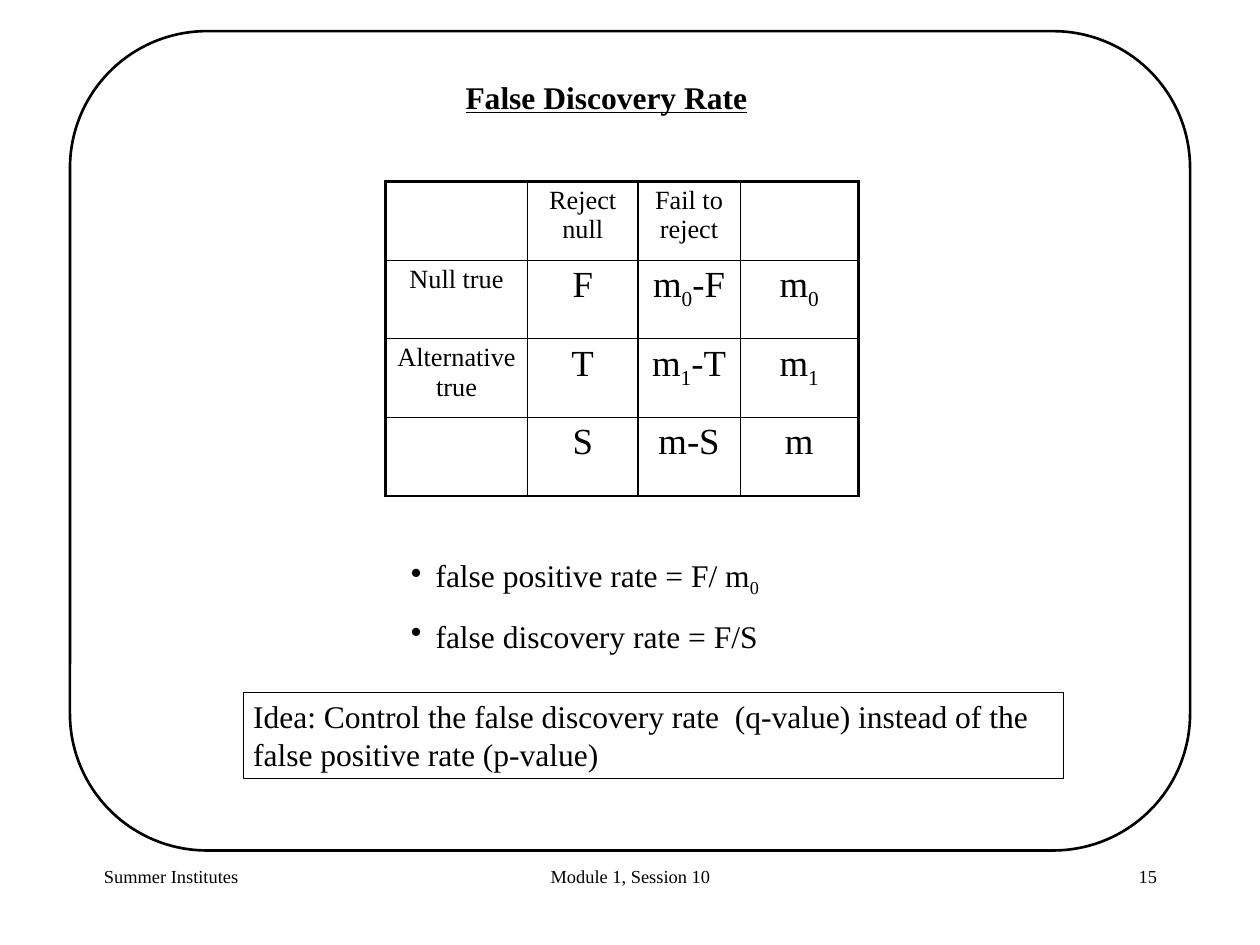
from itertools import product

from lxml.etree import SubElement
from pptx import Presentation
from pptx.dml.color import RGBColor
from pptx.enum.shapes import MSO_SHAPE as SHAPE
from pptx.enum.text import MSO_ANCHOR as ANCHOR, MSO_AUTO_SIZE as AUTO, PP_ALIGN as ALIGN
from pptx.oxml import parse_xml
from pptx.oxml.ns import nsdecls, qn
from pptx.util import Inches, Pt

BLACK = RGBColor(0x00, 0x00, 0x00)
FONT = "Times New Roman"
THIN, THICK = 1, 2.25


class SlideBuilder:
    """Holds the text style and the current slide."""

    def __init__(self, prs):
        self.s = prs.slides.add_slide(prs.slide_layouts[5])
        self.style = {"name": FONT, "bold": False}

    def fill_text(self, p, text, size, align=ALIGN.LEFT, **extra):
        """Fill a paragraph; the character after each "_" is a subscript."""
        p.alignment = align
        first, *rest = text.split("_")
        pieces = [(first, False)]
        for part in rest:
            pieces += [(part[0], True), (part[1:], False)]
        for piece, is_sub in pieces:
            if not piece:
                continue
            r = p.add_run()
            r.text = piece
            for key, value in {**self.style, "size": Pt(size), **extra}.items():
                setattr(r.font, key, value)
            r.font.color.rgb = BLACK
            if is_sub:
                r._r.get_or_add_rPr().set("baseline", "-25000")

    def frame(self, sp):
        tf = sp.text_frame
        for key, value in {"word_wrap": True, "auto_size": AUTO.NONE,
                           "vertical_anchor": ANCHOR.TOP}.items():
            setattr(tf, key, value)
        return tf

    def title(self, text, box, size):
        sp = self.s.shapes.title
        sp.left, sp.top, sp.width, sp.height = map(Inches, box)
        self.fill_text(self.frame(sp).paragraphs[0], text, size, ALIGN.CENTER,
                       bold=True, underline=True)

    def text(self, text, box, size, align=ALIGN.LEFT):
        sp = self.s.shapes.add_textbox(*map(Inches, box))
        self.fill_text(self.frame(sp).paragraphs[0], text, size, align)

    def bullets(self, items, box, size):
        tf = self.frame(self.s.shapes.add_textbox(*map(Inches, box)))
        for i, item in enumerate(items):
            p = tf.add_paragraph() if i else tf.paragraphs[0]
            self.fill_text(p, item, size)
            if i:
                p.space_before = Pt(14)
            pPr = p._p.get_or_add_pPr()
            pPr.set("marL", str(Inches(0.26)))
            pPr.set("indent", str(-Inches(0.26)))
            SubElement(pPr, qn("a:buChar")).set("char", "•")

    def outline(self, kind, box, weight):
        sp = self.s.shapes.add_shape(kind, *map(Inches, box))
        sp.shadow.inherit = False
        sp.fill.background()
        sp.line.color.rgb = BLACK
        sp.line.width = Pt(weight)
        return sp

    def table(self, rows, box, widths, label_size, value_size):
        n_rows, n_cols = len(rows), len(widths)
        tbl = self.s.shapes.add_table(n_rows, n_cols, *map(Inches, box)).table
        tbl.first_row = tbl.horz_banding = False
        for col, width in zip(tbl.columns, widths):
            col.width = Inches(width)
        for i, j in product(range(n_rows), range(n_cols)):
            cell = tbl.cell(i, j)
            cell.fill.background()
            size = value_size if i and j else label_size
            self.fill_text(cell.text_frame.paragraphs[0], rows[i][j], size, ALIGN.CENTER)
            # Outer edges are thick, inner rules thin
            outer = {"L": j == 0, "R": j == n_cols - 1, "T": i == 0, "B": i == n_rows - 1}
            self.borders(cell, {k: THICK if v else THIN for k, v in outer.items()})

    def borders(self, cell, weights):
        tcPr = cell._tc.get_or_add_tcPr()
        for pos, (side, weight) in enumerate(weights.items()):
            tcPr.insert(pos, parse_xml(
                f'<a:ln{side} {nsdecls("a")} w="{Pt(weight)}"><a:solidFill>'
                f'<a:srgbClr val="{BLACK}"/></a:solidFill></a:ln{side}>'))


def main():
    prs = Presentation()
    prs.slide_width, prs.slide_height = Inches(13.33), Inches(10)
    b = SlideBuilder(prs)

    # Rounded frame and title
    frame = b.outline(SHAPE.ROUNDED_RECTANGLE, (0.74, 0.33, 11.85, 8.67), 2)
    frame.adjustments[0] = 0.167
    b.title("False Discovery Rate", (4.5, 0.77, 3.83, 0.5), 24)

    # Test outcomes
    outcomes = [
        ["", "Reject null", "Fail to reject", ""],
        ["Null true", "F", "m_0-F", "m_0"],
        ["Alternative true", "T", "m_1-T", "m_1"],
        ["", "S", "m-S", "m"],
    ]
    b.table(outcomes, (4.08, 1.92, 5, 3.33), [1.5, 1.17, 1.08, 1.25], 20, 28)

    # Definitions
    b.bullets(["false positive rate = F/ m_0", "false discovery rate = F/S"],
              (4.25, 5.83, 4.67, 1.11), 24)

    # Boxed idea
    idea = b.outline(SHAPE.RECTANGLE, (2.58, 7.33, 8.67, 0.91), 0.75)
    b.fill_text(b.frame(idea).paragraphs[0],
                "Idea: Control the false discovery rate  (q-value) instead of the "
                "false positive rate (p-value)", 24)

    # Footer
    for text, left, width, align in [
        ("Summer Institutes", 1, 2.78, ALIGN.LEFT),
        ("Module 1, Session 10", 4.56, 4.22, ALIGN.CENTER),
        ("15", 9.56, 2.78, ALIGN.RIGHT),
    ]:
        b.text(text, (left, 9.11, width, 0.67), 14, align)

    prs.save("out.pptx")


if __name__ == "__main__":
    main()
